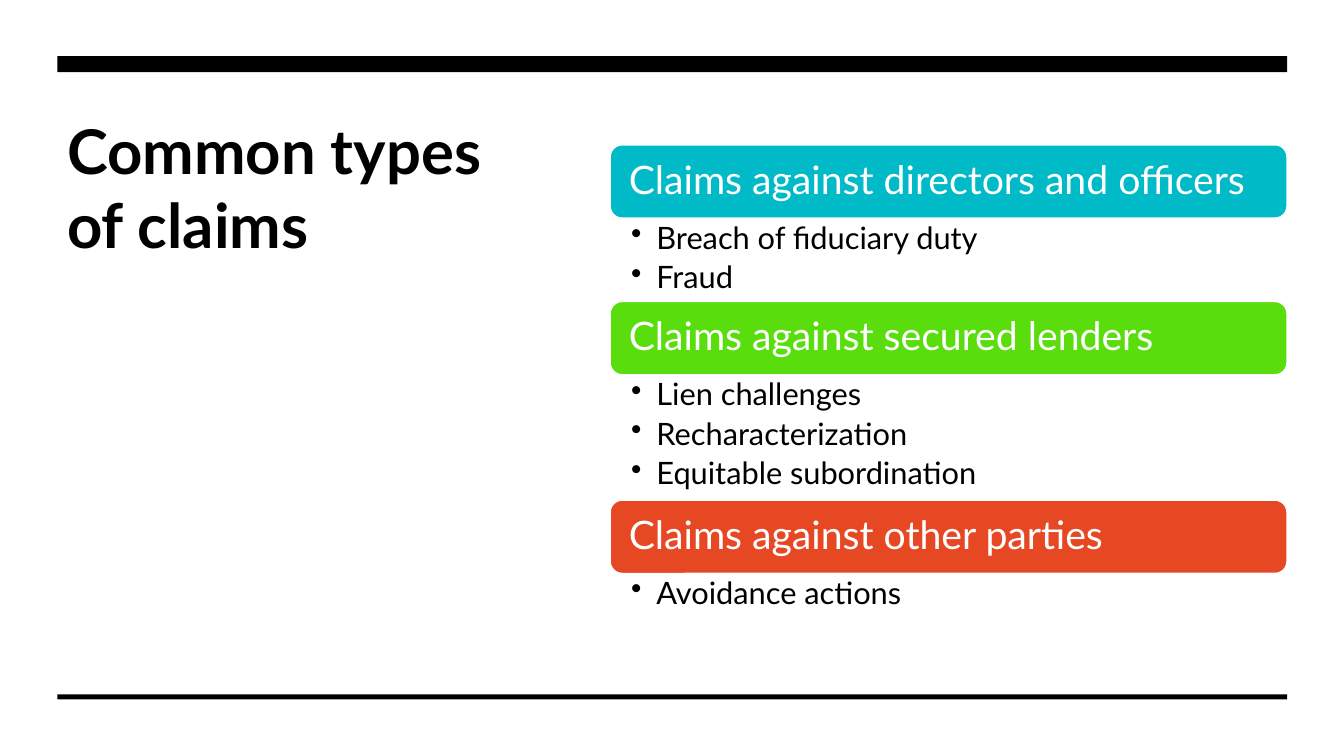
from lxml import etree
from pptx import Presentation
from pptx import util as u
from pptx.dml.color import RGBColor
from pptx.enum import shapes, text
from pptx.oxml import ns

COLORS = {"black": "000000", "white": "FFFFFF", "teal": "00BAC8",
          "green": "59DD0C", "orange": "E64823"}
CLAIMS = [
    ("Claims against directors and officers", "teal", 59,
     ["Breach of fiduciary duty", "Fraud"]),
    ("Claims against secured lenders", "green", 89,
     ["Lien challenges", "Recharacterization", "Equitable subordination"]),
    ("Claims against other parties", "orange", 37, ["Avoidance actions"]),
]
LEFT, BAR_WIDTH = 41, 878.4
CLAIMS_LEFT, CLAIMS_TOP, CLAIMS_WIDTH = 435.6, 103.2, 484
HEADING_HEIGHT = 52.9


class SlideBuilder:
    """Draws styled elements on one slide, with lengths in points."""

    def __init__(self, slide, font_name):
        self.slide = slide
        self.font_name = font_name

    def color(self, name):
        return RGBColor.from_string(COLORS[name])

    def shape(self, kind, box, fill, line=None):
        shape = self.slide.shapes.add_shape(kind, *map(u.Pt, box))
        shape.shadow.inherit = False
        shape.fill.solid()
        shape.fill.fore_color.rgb = self.color(fill)
        if line:
            shape.line.color.rgb = self.color(line)
            shape.line.width = u.Pt(1.5)
        else:
            shape.line.fill.background()
        return shape

    def bar(self, top, height):
        self.shape(shapes.MSO_SHAPE.RECTANGLE, (LEFT, top, BAR_WIDTH, height), "black")

    def textbox(self, box):
        return self.slide.shapes.add_textbox(*map(u.Pt, box)).text_frame

    def frame(self, frame, insets, anchor=text.MSO_ANCHOR.TOP):
        frame.word_wrap = True
        frame.vertical_anchor = anchor
        frame.margin_left = frame.margin_right = u.Pt(insets[0])
        frame.margin_top = frame.margin_bottom = u.Pt(insets[1])

    def set_text(self, paragraph, words, size, color, bold=False, spacing=0.9):
        paragraph.text = words
        paragraph.alignment = text.PP_ALIGN.LEFT
        paragraph.line_spacing = spacing
        font = paragraph.font
        font.name, font.size, font.bold = self.font_name, u.Pt(size), bold
        font.color.rgb = self.color(color)

    def title(self, words, box):
        frame = self.textbox(box)
        self.frame(frame, (7.2, 3.6))
        self.set_text(frame.paragraphs[0], words, 44, "black", bold=True, spacing=1.0)

    def heading(self, words, box, fill):
        shape = self.shape(shapes.MSO_SHAPE.ROUNDED_RECTANGLE, box, fill, "white")
        self.frame(shape.text_frame, (11, 8), text.MSO_ANCHOR.MIDDLE)
        self.set_text(shape.text_frame.paragraphs[0], words, 28, "white")

    def bullets(self, items, box):
        frame = self.textbox(box)
        self.frame(frame, (15.3, 2.9))
        for index, item in enumerate(items):
            paragraph = frame.add_paragraph() if index else frame.paragraphs[0]
            properties = paragraph._p.get_or_add_pPr()
            properties.set("marL", str(u.Pt(18)))
            properties.set("indent", str(u.Pt(-18)))
            etree.SubElement(properties, ns.qn("a:buChar"), char="•")
            paragraph.space_after = u.Pt(4.4)
            self.set_text(paragraph, item, 22, "black")


def main():
    presentation = Presentation()
    presentation.slide_width, presentation.slide_height = u.Pt(960), u.Pt(540)
    slide = presentation.slides.add_slide(presentation.slide_layouts[6])
    builder = SlideBuilder(slide, "Lato")
    builder.title("Common types of claims", (LEFT, 77, 337.7, 265))
    builder.bar(40.1, 11.5)
    builder.bar(496, 3.6)
    top = CLAIMS_TOP
    for heading, fill, height, items in CLAIMS:
        builder.heading(heading, (CLAIMS_LEFT, top, CLAIMS_WIDTH, HEADING_HEIGHT), fill)
        top += HEADING_HEIGHT
        builder.bullets(items, (CLAIMS_LEFT, top, CLAIMS_WIDTH, height))
        top += height
    presentation.save("out.pptx")


if __name__ == "__main__":
    main()
